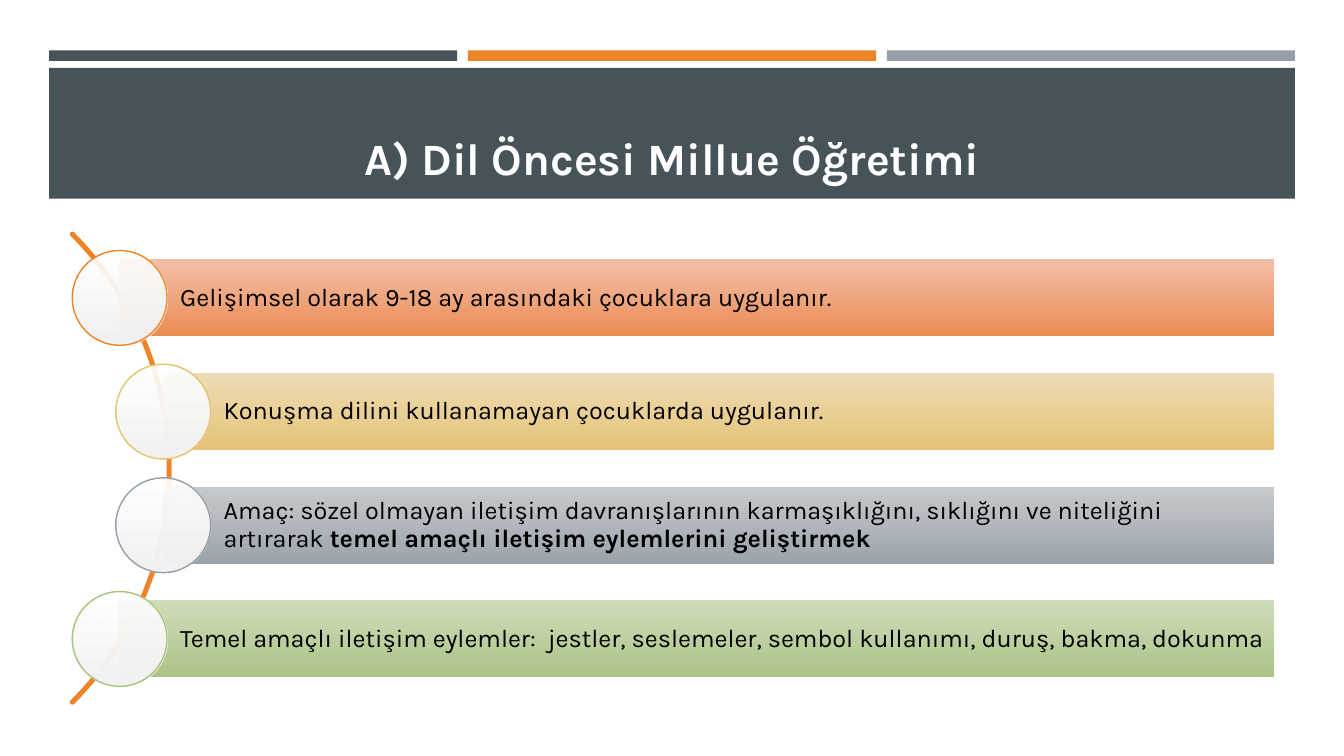
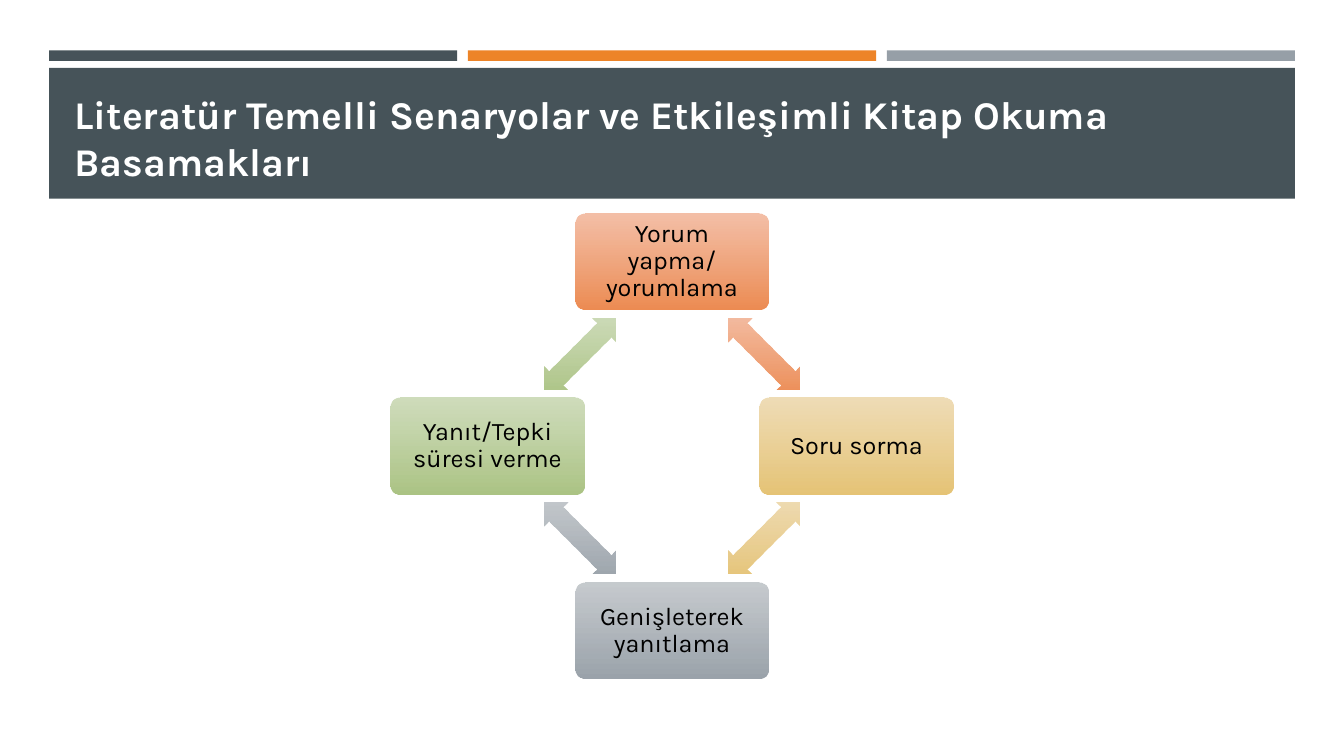
from dataclasses import dataclass
from math import cos, radians, sin

from lxml.etree import SubElement
from pptx import Presentation
from pptx.dml.color import RGBColor
from pptx.enum.shapes import MSO_SHAPE as Shp
from pptx.enum.text import MSO_ANCHOR as Anchor, PP_ALIGN as Align
from pptx.oxml.ns import qn
from pptx.util import Pt

FONT = "Karla"
COLORS = {
    "slate": "465359", "orange": "ED8428", "gray": "969FA7",
    "gold": "E6C46D", "green": "A9C37C", "white": "FFFFFF", "black": "000000",
}
GRADIENTS = {
    "orange": ("F3B89D", "ED8C53"),
    "gold": ("EED9AE", "E6C476"),
    "gray": ("C0C5C9", "9BA3AB"),
    "green": ("CAD9B4", "ACC485"),
    "white": ("FFFFFF", "F2F2F2"),
}
MID_Y = 334.6
ROW_PITCH, ROW_H, ROW_RIGHT, DISC = 81.2, 54.4, 909.5, 67.7
ARC_X, ARC_Y, ARC_R = -115.6, 334.4, 236.5
RING_X, RING_Y, RING_R = 480, 318.6, 131.8
STEP_W, STEP_H = 138, 68.8
ARROW_W, ARROW_H = 71.3, 23.8


@dataclass
class Run:
    text: str
    bold: bool = False


@dataclass
class Row:
    x: float
    color: str
    runs: list[Run]


@dataclass
class Step:
    text: str
    color: str


ROWS = [
    Row(85.5, "orange", [Run("Gelişimsel olarak 9-18 ay arasındaki çocuklara uygulanır.")]),
    Row(116.6, "gold", [Run("Konuşma dilini kullanamayan çocuklarda uygulanır.")]),
    Row(116.6, "gray", [
        Run("Amaç: sözel olmayan iletişim davranışlarının karmaşıklığını, "
            "sıklığını ve niteliğini artırarak "),
        Run("temel amaçlı iletişim eylemlerini geliştirmek", True),
    ]),
    Row(85.5, "green", [
        Run("Temel amaçlı iletişim eylemler:  jestler, seslemeler, "
            "sembol kullanımı, duruş, bakma, dokunma"),
    ]),
]
STEPS = [
    Step("Yorum yapma/ yorumlama", "orange"),
    Step("Soru sorma", "gold"),
    Step("Genişleterek yanıtlama", "gray"),
    Step("Yanıt/Tepki süresi verme", "green"),
]


def rgb(name: str) -> RGBColor:
    return RGBColor.from_string(COLORS[name])


def add_shape(slide, kind, x: float, y: float, w: float, h: float):
    sp = slide.shapes.add_shape(kind, Pt(x), Pt(y), Pt(w), Pt(h))
    sp.shadow.inherit = False
    sp.line.fill.background()
    return sp


def add_bar(slide, x: float, y: float, w: float, h: float, color: str) -> None:
    sp = add_shape(slide, Shp.RECTANGLE, x, y, w, h)
    sp.fill.solid()
    sp.fill.fore_color.rgb = rgb(color)


def add_gradient(slide, kind, cx: float, cy: float, w: float, h: float, color: str):
    sp = add_shape(slide, kind, cx - w / 2, cy - h / 2, w, h)
    sp.fill.gradient()
    sp.fill.gradient_angle = 270
    for stop, value in zip(sp.fill.gradient_stops, GRADIENTS[color]):
        stop.color.rgb = RGBColor.from_string(value)
    grad = sp._element.spPr.find(qn("a:gradFill"))
    grad.set("rotWithShape", "0")
    first = next(grad.iter(qn("a:srgbClr")))
    SubElement(first, qn("a:alpha")).set("val", "90000")
    return sp


def write(sp, runs: list[Run], size: float, color: str, align, anchor,
          insets: tuple[float, float, float, float], spacing: float = 1.0) -> None:
    tf = sp.text_frame
    tf.word_wrap = True
    tf.vertical_anchor = anchor
    tf.margin_left, tf.margin_top, tf.margin_right, tf.margin_bottom = map(Pt, insets)
    p = tf.paragraphs[0]
    p.alignment = align
    p.line_spacing = spacing
    for run in runs:
        r = p.add_run()
        r.text = run.text
        r.font.name = FONT
        r.font.size = Pt(size)
        r.font.bold = run.bold
        r.font.color.rgb = rgb(color)


def add_slide(prs, title: str, size: float, align):
    slide = prs.slides.add_slide(prs.slide_layouts[6])
    for i, color in enumerate(("slate", "orange", "gray")):
        add_bar(slide, 35 + 299.2 * i, 36, 291.6, 7.5, color)
    add_bar(slide, 35, 48.5, 890, 93.5, "slate")
    box = slide.shapes.add_textbox(Pt(46.2), Pt(55.5), Pt(868), Pt(80))
    write(box, [Run(title, True)], size, "white", align, Anchor.BOTTOM,
          (7.2, 3.6, 7.2, 3.6))
    return slide


def add_arc(slide) -> None:
    points = [
        (Pt(ARC_X + ARC_R * cos(radians(a))), Pt(ARC_Y + ARC_R * sin(radians(a))))
        for a in range(-45, 46)
    ]
    builder = slide.shapes.build_freeform(*points[0], scale=1.0)
    builder.add_line_segments(points[1:], close=False)
    sp = builder.convert_to_shape()
    sp.shadow.inherit = False
    sp.fill.background()
    sp.line.color.rgb = rgb("orange")
    sp.line.width = Pt(3.6)
    sp.line._get_or_add_ln().set("cap", "rnd")


def add_row(slide, row: Row, cy: float) -> None:
    w = ROW_RIGHT - row.x
    bar = add_gradient(slide, Shp.RECTANGLE, row.x + w / 2, cy, w, ROW_H, row.color)
    write(bar, row.runs, 18, "black", Align.LEFT, Anchor.MIDDLE,
          (43.2, 3.6, 3.6, 3.6), 0.9)
    disc = add_gradient(slide, Shp.OVAL, row.x, cy, DISC, DISC, "white")
    disc.line.color.rgb = rgb(row.color)
    disc.line.width = Pt(1)


def add_step(slide, step: Step, angle: float) -> None:
    cx = RING_X + RING_R * sin(radians(angle))
    cy = RING_Y - RING_R * cos(radians(angle))
    box = add_gradient(slide, Shp.ROUNDED_RECTANGLE, cx, cy, STEP_W, STEP_H, step.color)
    box.adjustments[0] = 0.1
    write(box, [Run(step.text)], 18, "black", Align.CENTER, Anchor.MIDDLE,
          (7.2, 7.2, 7.2, 7.2), 0.9)
    turn = angle + 45
    reach = RING_R / 2 ** 0.5
    arrow = add_gradient(slide, Shp.LEFT_RIGHT_ARROW,
                         RING_X + reach * sin(radians(turn)),
                         RING_Y - reach * cos(radians(turn)),
                         ARROW_W, ARROW_H, step.color)
    arrow.adjustments[0] = 0.6
    arrow.adjustments[1] = 0.5
    arrow.rotation = turn


def main() -> None:
    prs = Presentation()
    prs.slide_width, prs.slide_height = Pt(960), Pt(540)

    slide = add_slide(prs, "A) Dil Öncesi Millue Öğretimi", 32, Align.CENTER)
    add_arc(slide)
    for i, row in enumerate(ROWS):
        add_row(slide, row, MID_Y + (i - (len(ROWS) - 1) / 2) * ROW_PITCH)

    slide = add_slide(
        prs, "Literatür Temelli Senaryolar ve Etkileşimli Kitap Okuma Basamakları",
        28, Align.LEFT)
    for i, step in enumerate(STEPS):
        add_step(slide, step, 360 / len(STEPS) * i)

    prs.save("out.pptx")


if __name__ == "__main__":
    main()
